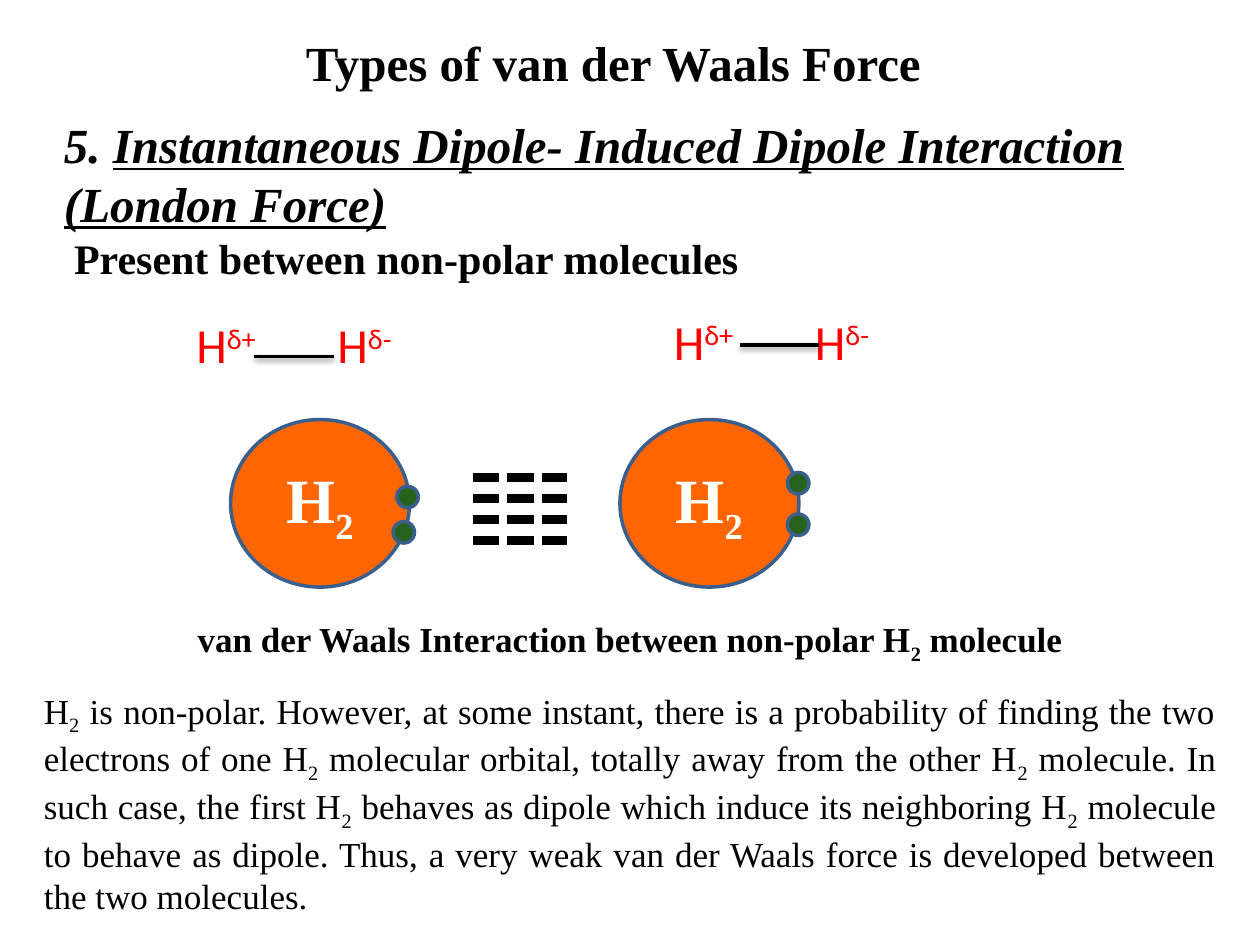
from dataclasses import dataclass, field

import pptx
import pptx.dml.color
import pptx.enum.dml
import pptx.enum.shapes
import pptx.enum.text
import pptx.oxml
import pptx.oxml.ns
import pptx.util
from pptx.util import Inches

RGBColor = pptx.dml.color.RGBColor
ALIGN = pptx.enum.text.PP_ALIGN
BLACK = RGBColor(0x00, 0x00, 0x00)
WHITE = RGBColor(0xFF, 0xFF, 0xFF)
RED = RGBColor(0xFF, 0x00, 0x00)
ORANGE = RGBColor(0xFF, 0x66, 0x00)
GREEN = RGBColor(0x26, 0x62, 0x1C)
BLUE = RGBColor(0x3A, 0x5F, 0x8C)

A_NS = pptx.oxml.ns.nsdecls("a")
NO_EFFECTS = f"<a:effectLst {A_NS}/>"
BOND_SHADOW = (
    f'<a:effectLst {A_NS}><a:outerShdw blurRad="40000" dist="20000" dir="5400000" rotWithShape="0">'
    '<a:srgbClr val="000000"><a:alpha val="38000"/></a:srgbClr></a:outerShdw></a:effectLst>'
)
SUBSCRIPT, SUPERSCRIPT = -25, 30


@dataclass
class Line:
    """One paragraph; every second part between bars is a shifted script."""
    text: str
    size: int
    align: ALIGN = ALIGN.LEFT
    shift: int = SUBSCRIPT
    tab: float = 0
    indent: float = 0
    font: dict = field(default_factory=dict)
    plain_start: str = ""


@dataclass
class TextBox:
    left: float
    top: float
    width: float
    height: float
    lines: list[Line]


@dataclass
class Molecule:
    left: float
    electrons: list[tuple[float, float]]


@dataclass
class Formula:
    left: float
    top: float
    bond_start: float
    bond_y: float


def set_format(font, size: int, values: dict) -> None:
    settings = {"name": "Times New Roman", "color": BLACK, **values}
    font.size = pptx.util.Pt(size)
    font.color.rgb = settings.pop("color")
    for name, value in settings.items():
        setattr(font, name, value)


def write_line(paragraph, line: Line) -> None:
    paragraph.alignment = line.align
    properties = paragraph._p.get_or_add_pPr()
    if line.indent:
        properties.set("indent", str(Inches(line.indent)))
    if line.tab:
        properties.append(pptx.oxml.parse_xml(
            f'<a:tabLst {A_NS}><a:tab pos="{Inches(line.tab)}" algn="l"/></a:tabLst>'))
    if line.plain_start:
        start = paragraph.add_run()
        start.text = line.plain_start
        set_format(start.font, line.size, {**line.font, "underline": False})
    for index, part in enumerate(line.text.split("|")):
        run = paragraph.add_run()
        run.text = part
        set_format(run.font, line.size, line.font)
        if index % 2:
            run._r.get_or_add_rPr().set("baseline", str(line.shift * 1000))


def add_text(slide, box: TextBox) -> None:
    frame = slide.shapes.add_textbox(
        Inches(box.left), Inches(box.top), Inches(box.width), Inches(box.height)).text_frame
    frame.word_wrap = True
    frame.auto_size = pptx.enum.text.MSO_AUTO_SIZE.SHAPE_TO_FIT_TEXT
    for index, line in enumerate(box.lines):
        write_line(frame.add_paragraph() if index else frame.paragraphs[0], line)


def add_line(slide, left: float, right: float, y: float, weight: float, effects: str):
    line = slide.shapes.add_connector(
        pptx.enum.shapes.MSO_CONNECTOR.STRAIGHT, Inches(left), Inches(y), Inches(right), Inches(y))
    line.line.color.rgb = BLACK
    line.line.width = pptx.util.Pt(weight)
    line._element.spPr.append(pptx.oxml.parse_xml(effects))
    return line


def add_ellipse(slide, left: float, top: float, width: float, height: float, color: RGBColor):
    ellipse = slide.shapes.add_shape(
        pptx.enum.shapes.MSO_SHAPE.OVAL, Inches(left), Inches(top), Inches(width), Inches(height))
    ellipse.shadow.inherit = False
    ellipse.fill.solid()
    ellipse.fill.fore_color.rgb = color
    ellipse.line.color.rgb = BLUE
    ellipse.line.width = pptx.util.Pt(2)
    return ellipse


def add_molecule(slide, molecule: Molecule) -> None:
    orbital = add_ellipse(slide, molecule.left, 3.33, 1.42, 1.33, ORANGE)
    orbital.text_frame.vertical_anchor = pptx.enum.text.MSO_ANCHOR.MIDDLE
    write_line(orbital.text_frame.paragraphs[0],
               Line("H|2", 36, ALIGN.CENTER, font={"bold": True, "color": WHITE}))
    for left, top in molecule.electrons:
        add_ellipse(slide, left, top, 0.17, 0.17, GREEN)


def add_formula(slide, formula: Formula) -> None:
    atoms = Line("H|δ+|\tH|δ-", 28, shift=SUPERSCRIPT, tab=1.12,
                 font={"name": "Calibri", "color": RED})
    add_text(slide, TextBox(formula.left, formula.top, 2.17, 0.57, [atoms]))
    add_line(slide, formula.bond_start, formula.bond_start + 0.63, formula.bond_y, 2, BOND_SHADOW)


BOLD = {"bold": True}
HEADING = {"bold": True, "italic": True, "underline": True}

TEXTS = [
    TextBox(2.33, 0.21, 5.33, 0.57,
            [Line("Types of van der Waals Force", 28, ALIGN.JUSTIFY, font=BOLD)]),
    TextBox(0.41, 0.86, 9, 1.45, [
        Line("Instantaneous Dipole- Induced Dipole Interaction", 28, font=HEADING, plain_start="5. "),
        Line("(London Force)", 28, font=HEADING),
        Line("Present between non-polar molecules", 24, indent=0.08, font=BOLD),
    ]),
    TextBox(0, 4.85, 10, 0.44,
            [Line("van der Waals Interaction between non-polar H|2| molecule", 20,
                  ALIGN.CENTER, font=BOLD)]),
    TextBox(0.25, 5.42, 9.5, 1.78, [Line(
        "H|2| is non-polar. However, at some instant, there is a probability of finding the two "
        "electrons of one H|2| molecular orbital, totally away from the other H|2| molecule. "
        "In such case, the first H|2| behaves as dipole which induce its neighboring H|2| molecule "
        "to behave as dipole. Thus, a very weak van der Waals force is developed between "
        "the two molecules.", 20, ALIGN.JUSTIFY)]),
]
MOLECULES = [
    Molecule(1.83, [(3.15, 3.86), (3.12, 4.14)]),
    Molecule(4.92, [(6.25, 3.75), (6.25, 4.08)]),
]
FORMULAS = [Formula(5.25, 2.42, 5.87, 2.74), Formula(1.46, 2.45, 2.02, 2.83)]


def main() -> None:
    presentation = pptx.Presentation()
    presentation.slide_width, presentation.slide_height = Inches(10), Inches(7.5)
    slide = presentation.slides.add_slide(presentation.slide_layouts[6])

    # Heading, caption and explanation
    for box in TEXTS:
        add_text(slide, box)

    # Weak attraction between the molecules
    for row in range(4):
        force = add_line(slide, 3.75, 4.5, 3.79 + row / 6, 5, NO_EFFECTS)
        force.line.dash_style = pptx.enum.dml.MSO_LINE.SQUARE_DOT

    # Molecules with their electrons
    for molecule in MOLECULES:
        add_molecule(slide, molecule)

    # Dipole formulas with their bonds
    for formula in FORMULAS:
        add_formula(slide, formula)

    presentation.save("out.pptx")


if __name__ == "__main__":
    main()
